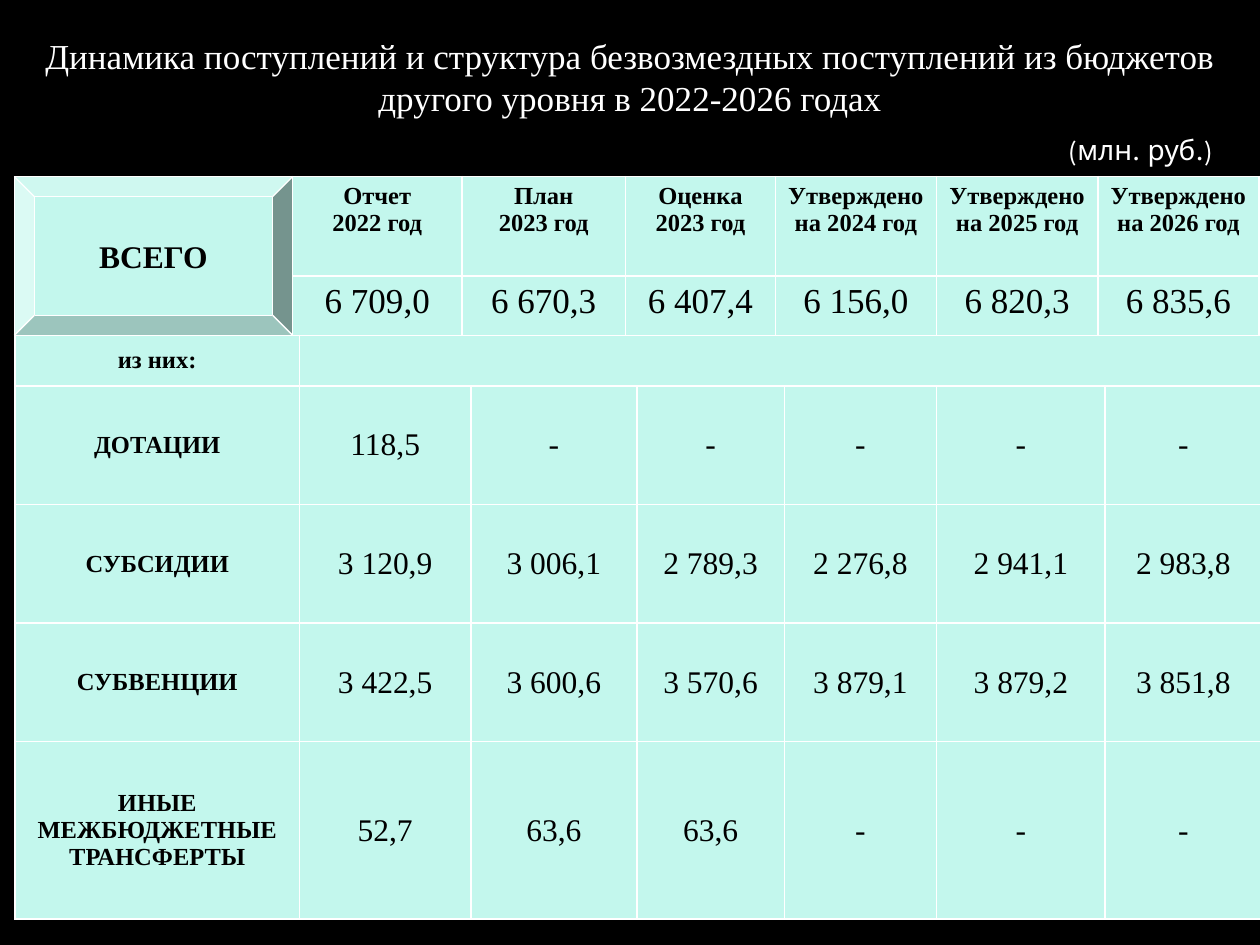
from lxml import etree
from pptx import Presentation
from pptx.dml.color import RGBColor
from pptx.enum.shapes import MSO_SHAPE
from pptx.enum.text import MSO_ANCHOR, PP_ALIGN
from pptx.oxml import parse_xml
from pptx.oxml.ns import nsdecls
from pptx.util import Cm, Pt

BLACK = RGBColor(0x00, 0x00, 0x00)
WHITE = RGBColor(0xFF, 0xFF, 0xFF)
MINT = RGBColor(0xC3, 0xF7, 0xED)
SERIF = "Times New Roman"
SANS = "League Spartan"
CENTER = PP_ALIGN.CENTER
MIDDLE = MSO_ANCHOR.MIDDLE
TOP = MSO_ANCHOR.TOP

TOTAL_COLUMNS = [3.41, 3.3, 3.02, 3.25, 3.25, 3.25]
TOTAL_ROWS = [
    ["Отчет\n2022 год", "План\n2023 год", "Оценка 2023 год",
     "Утверждено на 2024 год", "Утверждено на 2025 год", "Утверждено на 2026 год"],
    ["6 709,0", "6 670,3", "6 407,4", "6 156,0", "6 820,3", "6 835,6"],
]
DETAIL_COLUMNS = [5.74, 3.45, 3.35, 2.97, 3.07, 3.4, 3.15]
DETAIL_ROWS = [
    ["из них:", "", "", "", "", "", ""],
    ["ДОТАЦИИ", "118,5", "-", "-", "-", "-", "-"],
    ["СУБСИДИИ", "3 120,9", "3 006,1", "2 789,3", "2 276,8", "2 941,1", "2 983,8"],
    ["СУБВЕНЦИИ", "3 422,5", "3 600,6", "3 570,6", "3 879,1", "3 879,2", "3 851,8"],
    ["ИНЫЕ МЕЖБЮДЖЕТНЫЕ ТРАНСФЕРТЫ", "52,7", "63,6", "63,6", "-", "-", "-"],
]


def write(text_frame, text, size, color=BLACK, font=SERIF, bold=False, align=CENTER):
    """Write each line of the text as one paragraph with one run."""
    for index, line in enumerate(text.split("\n")):
        paragraph = text_frame.add_paragraph() if index else text_frame.paragraphs[0]
        paragraph.alignment = align
        run = paragraph.add_run()
        run.text = line
        run.font.name = font
        run.font.size = Pt(size)
        run.font.bold = bold
        run.font.color.rgb = color


def add_bordered_table(left, top, widths, heights):
    """Add a mint table with thin white borders around every cell."""
    table = slide.shapes.add_table(len(heights), len(widths), Cm(left), Cm(top),
                                   Cm(sum(widths)), Cm(sum(heights))).table
    for column, width in zip(table.columns, widths):
        column.width = Cm(width)
    for row, height in zip(table.rows, heights):
        row.height = Cm(height)
    for cell in table.iter_cells():
        properties = cell._tc.get_or_add_tcPr()
        for side in ("lnL", "lnR", "lnT", "lnB"):
            properties.append(parse_xml(
                f'<a:{side} {nsdecls("a")} w="{Pt(1)}"><a:solidFill>'
                f'<a:srgbClr val="{WHITE}"/></a:solidFill></a:{side}>'))
        cell.fill.solid()
        cell.fill.fore_color.rgb = MINT
    return table


presentation = Presentation()
presentation.slide_width = Cm(25.4)
presentation.slide_height = Cm(19.05)
slide = presentation.slides.add_slide(presentation.slide_layouts[5])
slide.background.fill.solid()
slide.background.fill.fore_color.rgb = BLACK

# Title and unit of measure
title = slide.shapes.title
title.left, title.top, title.width, title.height = Cm(0), Cm(0.7), Cm(25.4), Cm(1.7)
title.text_frame.vertical_anchor = MIDDLE
write(title.text_frame, "Динамика поступлений и структура безвозмездных поступлений "
      "из бюджетов другого уровня в 2022-2026 годах", 20, WHITE)

unit_box = slide.shapes.add_textbox(Cm(21.3), Cm(2.54), Cm(3.6), Cm(0.94))
unit_box.text_frame.word_wrap = False
write(unit_box.text_frame, "(млн. руб.)", 16, WHITE, SANS, align=PP_ALIGN.LEFT)

# Totals by year
total_table = add_bordered_table(5.9, 3.56, TOTAL_COLUMNS, [2, 1.94])
for row_index, values in enumerate(TOTAL_ROWS):
    is_header = row_index == 0
    for column_index, value in enumerate(values):
        cell = total_table.cell(row_index, column_index)
        cell.vertical_anchor = TOP
        cell.margin_left = cell.margin_right = Cm(0.2)
        write(cell.text_frame, value, 14 if is_header else 20, bold=is_header)

total_label = slide.shapes.add_shape(MSO_SHAPE.BEVEL, Cm(0.29), Cm(3.56), Cm(5.61), Cm(3.2))
total_label.shadow.inherit = False
total_label.fill.solid()
total_label.fill.fore_color.rgb = MINT
total_label.line.color.rgb = WHITE
total_label.line.width = Pt(0.75)
total_label.text_frame.vertical_anchor = MIDDLE
write(total_label.text_frame, "ВСЕГО", 18, bold=True)

# Breakdown by kind of transfer
detail_table = add_bordered_table(0.3, 6.76, DETAIL_COLUMNS, [1.02, 2.39, 2.39, 2.39, 3.58])
detail_table.cell(0, 1).merge(detail_table.cell(0, 6))
for row_index, values in enumerate(DETAIL_ROWS):
    for column_index, value in enumerate(values):
        if value:
            is_label = column_index == 0
            cell = detail_table.cell(row_index, column_index)
            cell.vertical_anchor = MIDDLE
            write(cell.text_frame, value, 14 if is_label else 18, bold=is_label)

presentation.save("out.pptx")
